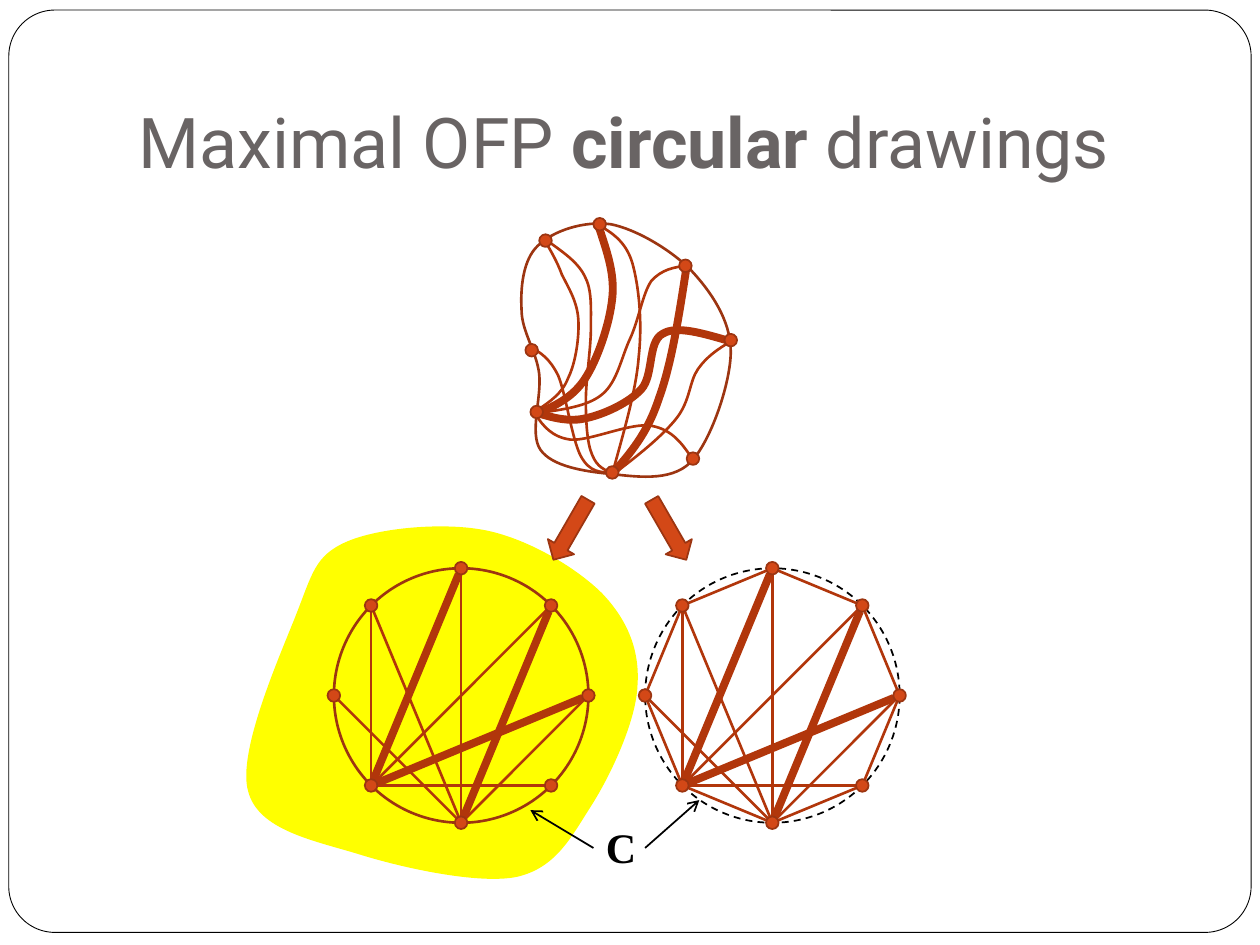
"""Builds a slide on maximal OFP circular drawings of a graph."""
from math import cos, hypot, pi, sin

from lxml.etree import SubElement
from pptx import Presentation
from pptx.dml.color import RGBColor
from pptx.enum.dml import MSO_LINE
from pptx.enum.shapes import MSO_CONNECTOR, MSO_SHAPE
from pptx.enum.text import MSO_ANCHOR, MSO_AUTO_SIZE, PP_ALIGN
from pptx.oxml.ns import qn
from pptx.util import Inches, Pt

THEME = {
    "dot": "D34817", "rim": "9C3511", "edge": "B1360B", "title": "696464",
    "ink": "000000", "paper": "FFFFFF", "glow": "FFFF00",
    "head": 40, "label": 24, "sans": "Roboto", "serif": "Times New Roman",
    "hair": 0.5, "fine": 1, "thin": 1.5, "thick": 4.5,
}
TITLE = [("Maximal OFP ", False), ("circular", True), (" drawings", False)]

BLOB = [(2.35, 4.88), (2.48, 4.55), (2.5, 4.41), (2.75, 4.3), (3, 4.19), (3.52, 4.14),
        (3.86, 4.21), (4.2, 4.28), (4.58, 4.51), (4.78, 4.71), (4.98, 4.92), (5.08, 5.16),
        (5.06, 5.44), (5.05, 5.72), (4.85, 6.15), (4.69, 6.4), (4.53, 6.65), (4.41, 6.89),
        (4.1, 6.96), (3.8, 7.02), (3.2, 6.89), (2.85, 6.78), (2.49, 6.67), (2.05, 6.59),
        (1.97, 6.28), (1.88, 5.97), (2.22, 5.21), (2.35, 4.88)]
OUTLINE = [(4.83, 3.76), (4.63, 3.74), (4.38, 3.7), (4.29, 3.57), (4.2, 3.44), (4.3, 3.16),
           (4.28, 2.97), (4.26, 2.79), (4.14, 2.63), (4.14, 2.46), (4.13, 2.29), (4.15, 2.06),
           (4.27, 1.95), (4.39, 1.83), (4.64, 1.75), (4.85, 1.78), (5.05, 1.82), (5.32, 1.98),
           (5.48, 2.14), (5.64, 2.31), (5.8, 2.54), (5.8, 2.79), (5.8, 3.04), (5.64, 3.51),
           (5.48, 3.67), (5.32, 3.83), (5.03, 3.78), (4.83, 3.76)]
CURVES = [
    ("thick", [(4.27, 3.28), (4.4, 3.22), (4.54, 3.16), (4.64, 3.01), (4.74, 2.86),
               (4.84, 2.57), (4.86, 2.36), (4.88, 2.16), (4.81, 1.98), (4.75, 1.79)]),
    ("thin", [(4.27, 3.28), (4.46, 3.25), (4.66, 3.23), (4.78, 3.13), (4.9, 3.03),
              (4.93, 2.84), (5, 2.69), (5.07, 2.54), (5.1, 2.33), (5.17, 2.23),
              (5.25, 2.14), (5.35, 2.12), (5.45, 2.11)]),
    ("thick", [(4.27, 3.28), (4.4, 3.32), (4.52, 3.35), (4.65, 3.32), (4.79, 3.29),
               (4.99, 3.2), (5.09, 3.09), (5.19, 2.98), (5.14, 2.71), (5.26, 2.65),
               (5.37, 2.58), (5.59, 2.65), (5.8, 2.71)]),
    ("thin", [(4.25, 3.29), (4.31, 3.38), (4.38, 3.47), (4.53, 3.49), (4.69, 3.5),
              (5.01, 3.35), (5.17, 3.38), (5.34, 3.41), (5.42, 3.53), (5.5, 3.65)]),
    ("thin", [(4.26, 3.26), (4.36, 3.19), (4.46, 3.13), (4.51, 3), (4.57, 2.88),
              (4.6, 2.67), (4.59, 2.53), (4.58, 2.39), (4.51, 2.28), (4.46, 2.18),
              (4.42, 2.07), (4.37, 1.99), (4.32, 1.9)]),
    ("thin", [(4.86, 3.75), (4.77, 3.75), (4.68, 3.75), (4.61, 3.62), (4.54, 3.49),
              (4.49, 3.12), (4.43, 2.98), (4.36, 2.84), (4.29, 2.8), (4.22, 2.76)]),
    ("thin", [(4.87, 3.76), (4.8, 3.73), (4.74, 3.71), (4.7, 3.61), (4.66, 3.52),
              (4.65, 3.35), (4.65, 3.18), (4.65, 3.01), (4.69, 2.77), (4.69, 2.61),
              (4.69, 2.44), (4.7, 2.3), (4.64, 2.19), (4.58, 2.07), (4.45, 1.99),
              (4.33, 1.9)]),
    ("thin", [(4.86, 3.76), (4.95, 3.43), (5.05, 3.1), (5.07, 2.83), (5.1, 2.55),
              (5.07, 2.27), (5.02, 2.09), (4.97, 1.92), (4.86, 1.85), (4.76, 1.79)]),
    ("thick", [(4.86, 3.76), (5, 3.6), (5.14, 3.44), (5.23, 3.16), (5.33, 2.89),
               (5.39, 2.5), (5.45, 2.11)]),
    ("thin", [(4.86, 3.77), (5.06, 3.62), (5.26, 3.46), (5.37, 3.32), (5.48, 3.18),
              (5.47, 3.03), (5.54, 2.93), (5.61, 2.83), (5.7, 2.77), (5.8, 2.71)]),
]
NODES = [(4.26, 3.27), (4.86, 3.75), (4.33, 1.91), (5.8, 2.7),
         (4.76, 1.78), (5.5, 3.64), (4.22, 2.78), (5.44, 2.11)]

NAMES = ["E", "SE", "S", "SW", "W", "NW", "N", "NE"]
CHORDS = [("SW", "NW", "thin"), ("SW", "N", "thick"), ("SW", "NE", "thin"),
          ("W", "S", "thin"), ("S", "N", "thin"), ("S", "E", "thin"),
          ("SW", "SE", "thin"), ("SW", "E", "thick"), ("NW", "S", "thin"),
          ("NE", "S", "thick")]
SIDES = [(a, b, "thin") for a, b in zip(NAMES, NAMES[1:] + NAMES[:1])]
RADIUS, DOT, MID = 1.01, 0.05, 5.52
LEFT, RIGHT = 3.66, 6.13
BLOCKS = [(4.41, 30), (5.19, 330)]
LEADS = [((4.71, 6.73), (4.21, 6.43)), ((5.12, 6.73), (5.55, 6.35))]


def tint(name):
    return RGBColor.from_string(THEME[name])


def paint(shape, fill=None, line=None, width="fine"):
    shape.shadow.inherit = False
    for part, hue in ((shape.fill, fill), (shape.line.fill, line)):
        if hue:
            part.solid()
            part.fore_color.rgb = tint(hue)
        else:
            part.background()
    if line:
        shape.line.width = Pt(THEME[width])
    return shape


def preset(host, kind, x, y, w, h, **look):
    return paint(host.add_shape(kind, *map(Inches, (x, y, w, h))), **look)


def disc(host, x, y, r, **look):
    return preset(host, MSO_SHAPE.OVAL, x - r, y - r, 2 * r, 2 * r, **look)


def dots(host, spots):
    for x, y in spots:
        disc(host, x, y, DOT, fill="dot", line="rim")


def curve(host, points, close=False, **look):
    first, *rest = [(Inches(x), Inches(y)) for x, y in points]
    pen = host.build_freeform(*first)
    pen.add_line_segments(rest, close=close)
    shape = pen.convert_to_shape()
    steps = list(shape.element.iter(qn("a:lnTo")))
    for i in range(0, len(rest), 3):
        trio = steps[i:i + 3]
        bend = SubElement(trio[0].getparent(), qn("a:cubicBezTo"))
        trio[0].addprevious(bend)
        for step in trio:
            bend.append(step[0])
            step.getparent().remove(step)
    return paint(shape, **look)


def link(host, start, end, hue, width, head=False):
    line = host.add_connector(MSO_CONNECTOR.STRAIGHT, *map(Inches, start + end))
    line.line.color.rgb = tint(hue)
    line.line.width = Pt(THEME[width])
    frame = line.element.spPr
    if head:
        SubElement(frame.find(qn("a:ln")), qn("a:tailEnd"), type="arrow")
    SubElement(frame, qn("a:effectLst"))


def text(shape, runs, size, font, hue, wrap=True, fit=MSO_AUTO_SIZE.NONE,
         align=PP_ALIGN.LEFT, anchor=MSO_ANCHOR.TOP, foot=0.05):
    frame = shape.text_frame
    frame.word_wrap, frame.auto_size, frame.vertical_anchor = wrap, fit, anchor
    frame.margin_left = frame.margin_right = Inches(0.1)
    frame.margin_top, frame.margin_bottom = Inches(0.05), Inches(foot)
    para = frame.paragraphs[0]
    para.alignment = align
    for words, bold in runs:
        run = para.add_run()
        run.text = words
        run.font.size, run.font.name, run.font.bold = Pt(THEME[size]), THEME[font], bold
        run.font.color.rgb = tint(hue)


def wheel(host, mid, edges):
    spots = {name: (mid + RADIUS * cos(k * pi / 4), MID + RADIUS * sin(k * pi / 4))
             for k, name in enumerate(NAMES)}
    for a, b, width in edges:
        (x, y), (u, v) = spots[a], spots[b]
        span = hypot(u - x, v - y)
        dx, dy = DOT * (u - x) / span, DOT * (v - y) / span
        link(host, (x + dx, y + dy), (u - dx, v - dy), "edge", width)
    dots(host, spots.values())


def main():
    deck = Presentation()
    deck.slide_width, deck.slide_height = Inches(10), Inches(7.5)
    slide = deck.slides.add_slide(deck.slide_layouts[5])
    shapes = slide.shapes
    frame = preset(shapes, MSO_SHAPE.ROUNDED_RECTANGLE, 0.07, 0.08, 9.86, 7.32,
                   fill="paper", line="ink", width="hair")
    frame.adjustments[0] = 0.05
    blob = curve(shapes, BLOB, close=True, fill="glow")

    title = shapes.title
    title.left, title.top, title.width, title.height = map(Inches, (1, 0.3, 8.5, 1.25))
    text(title, TITLE, "head", "sans", "title", anchor=MSO_ANCHOR.BOTTOM, foot=0.1)
    blob.element.addnext(title.element)

    ring = disc(shapes, RIGHT, MID, RADIUS, line="ink")
    ring.line.dash_style = MSO_LINE.DASH

    graph = shapes.add_group_shape().shapes
    for width, points in CURVES:
        curve(graph, points, line="edge", width=width)
    curve(graph, OUTLINE, close=True, line="rim", width="thin")
    dots(graph, NODES)

    net = shapes.add_group_shape().shapes
    disc(net, LEFT, MID, RADIUS, line="rim", width="thin")
    wheel(net, LEFT, CHORDS)
    wheel(shapes.add_group_shape().shapes, RIGHT, CHORDS + SIDES)

    for x, turn in BLOCKS:
        block = preset(shapes, MSO_SHAPE.DOWN_ARROW, x, 3.93, 0.24, 0.55,
                       fill="dot", line="rim")
        block.rotation = turn
    label = shapes.add_textbox(*map(Inches, (4.71, 6.47, 0.41, 0.5)))
    text(label, [("C", True)], "label", "serif", "ink", wrap=False,
         fit=MSO_AUTO_SIZE.SHAPE_TO_FIT_TEXT)
    for start, end in LEADS:
        link(shapes, start, end, "ink", "fine", head=True)
    deck.save("out.pptx")


if __name__ == "__main__":
    main()
